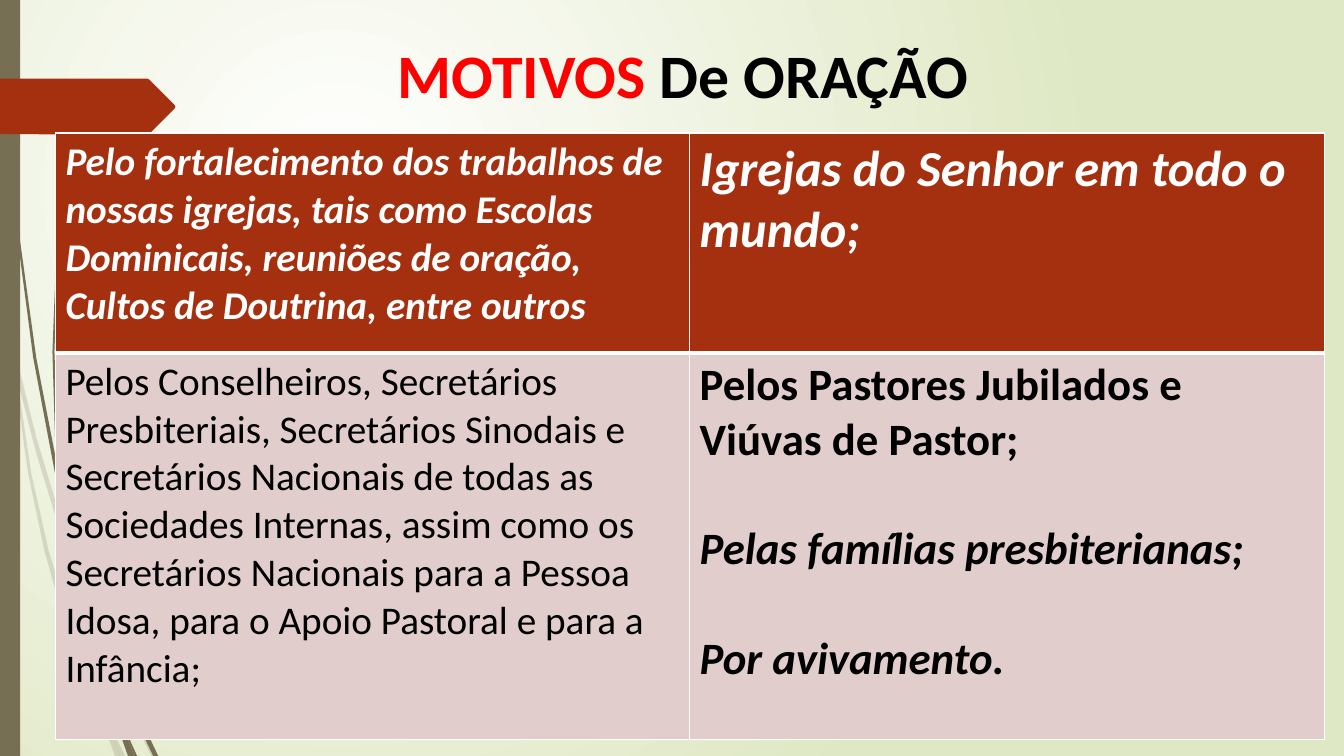
from pptx import Presentation
from pptx.dml.color import RGBColor
from pptx.enum.shapes import MSO_SHAPE
from pptx.enum.text import MSO_ANCHOR, PP_ALIGN
from pptx.oxml import parse_xml
from pptx.oxml.ns import nsdecls, qn
from pptx.util import Inches, Pt

THEME = {
    "font": "Calibri",
    "white": RGBColor(0xFF, 0xFF, 0xFF),
    "black": RGBColor(0, 0, 0),
    "red": RGBColor(0xFF, 0, 0),
    "rust": RGBColor(0xA5, 0x30, 0x10),
    "pink": RGBColor(0xE1, 0xCD, 0xCC),
    "olive": RGBColor(0x76, 0x6F, 0x54),
    "pale_green": RGBColor(0xDF, 0xE8, 0xC4),
    "title_size": Pt(44.1),
    "large": Pt(36),
    "medium": Pt(32),
    "small": Pt(28),
}


def draw_outline(points, color, opacity=100):
    corners = [(Inches(x), Inches(y)) for x, y in points]
    builder = slide.shapes.build_freeform(*corners[0])
    builder.add_line_segments(corners[1:], close=True)
    shape = builder.convert_to_shape()
    shape.shadow.inherit = False
    shape.fill.solid()
    shape.fill.fore_color.rgb = color
    shape.line.fill.background()
    if opacity < 100:
        color_element = shape._element.spPr.find(qn("a:solidFill"))[0]
        color_element.append(parse_xml(f'<a:alpha {nsdecls("a")} val="{opacity * 1000}"/>'))


def write_run(paragraph, text, format_values):
    run = paragraph.add_run()
    run.text = text
    run.font.name = THEME["font"]
    run.font.color.rgb = format_values["color"]
    for name in ("size", "bold", "italic"):
        setattr(run.font, name, format_values[name])


presentation = Presentation()
presentation.slide_width = Inches(13.33)
presentation.slide_height = Inches(7.5)
slide = presentation.slides.add_slide(presentation.slide_layouts[6])

# Background: circular glow from the upper left
background_fill = slide.background.fill
background_fill.gradient()
for stop, color in zip(background_fill.gradient_stops, ("white", "pale_green")):
    stop.color.rgb = THEME[color]
gradient = slide._element.find(".//" + qn("a:gradFill"))
gradient.replace(gradient.find(qn("a:lin")), parse_xml(
    f'<a:path {nsdecls("a")} path="circle">'
    '<a:fillToRect l="50000" t="50000" r="100000" b="100000"/></a:path>'))

# Grass stalks: faint ones behind, solid ones in front
faint_stalks = [
    [(0.58, 5.22), (0.84, 5.99), (0.85, 5.86), (0.62, 5.2), (0.36, 4.34), (0.14, 3.45),
     (0.17, 3.76), (0.36, 4.5)],
    [(0.92, 6.07), (0.88, 5.96), (0.88, 6.1), (1.23, 6.94), (1.5, 7.5), (1.55, 7.5), (1.27, 6.92)],
    [(1.19, 7.5), (1.24, 7.5), (1.05, 7.11)],
    [(0.93, 6.83), (0.7, 6.19), (0.48, 5.45), (0.31, 4.69), (0.17, 3.76), (0.11, 3.5),
     (0.28, 4.7), (0.44, 5.46), (0.65, 6.21), (0.92, 6.93), (1.01, 7.14), (0.99, 7.07)],
    [(1.01, 7.14), (1.14, 7.5), (1.19, 7.5)],
    [(0.96, 6.92), (0.93, 6.83), (0.99, 7.07), (1.01, 7.14), (1.19, 7.5), (1.05, 7.11)],
]
solid_stalks = [
    [(0.07, 1.1), (0.17, 2.33), (0.33, 3.55), (0.56, 4.77), (0.57, 4.81), (0.55, 4.57),
     (0.55, 4.53), (0.36, 3.55), (0.19, 2.32), (0.08, 1.09), (0.05, 0.48), (0.04, 0),
     (0.03, 0), (0.04, 0.48)],
    [(1.13, 6.49), (1.1, 6.41), (1.11, 6.56), (1.32, 7.08), (1.52, 7.5), (1.57, 7.5), (1.36, 7.06)],
    [(0.6, 4.72), (0.58, 4.53), (0.54, 3.49), (0.58, 2.45), (0.63, 1.93), (0.7, 1.41),
     (0.62, 1.93), (0.56, 2.45), (0.52, 3.49), (0.55, 4.49)],
    [(1.33, 7.5), (1.36, 7.5), (1.22, 7.19)],
    [(1.17, 7.22), (1.27, 7.5), (1.31, 7.5)],
    [(1.16, 7.06), (1.1, 6.91), (1.16, 7.17), (1.17, 7.22), (1.3, 7.5), (1.33, 7.5), (1.22, 7.19)],
]
for stalks, opacity in ((faint_stalks, 20), (solid_stalks, 100)):
    for stalk in stalks:
        draw_outline(stalk, THEME["olive"], opacity)

# Left bar and arrow tag
bar = slide.shapes.add_shape(MSO_SHAPE.RECTANGLE, 0, 0, Inches(0.2), Inches(7.5))
bar.shadow.inherit = False
bar.fill.solid()
bar.fill.fore_color.rgb = THEME["olive"]
bar.line.fill.background()
draw_outline([(0, 0.78), (1.46, 0.78), (1.48, 0.79), (1.73, 1.04), (1.74, 1.06),
              (1.73, 1.08), (1.48, 1.33), (1.46, 1.34), (0, 1.33)], THEME["rust"])

# Table of prayer reasons: each cell holds (text, format) paragraphs
heading = {"size": THEME["small"], "color": THEME["white"], "bold": True, "italic": True}
body = {"size": THEME["small"], "color": THEME["black"], "bold": False, "italic": False}
strong = {**body, "size": THEME["medium"], "bold": True}
strong_italic = {**strong, "italic": True}
reasons = [
    [[("Pelo fortalecimento dos trabalhos de nossas igrejas, tais como Escolas Dominicais, "
       "reuniões de oração, Cultos de Doutrina, entre outros", heading)],
     [("Igrejas do Senhor em todo o mundo;", {**heading, "size": THEME["large"]})]],
    [[("Pelos Conselheiros, Secretários Presbiteriais, Secretários Sinodais e Secretários "
       "Nacionais de todas as Sociedades Internas, assim como os Secretários Nacionais para a "
       "Pessoa Idosa, para o Apoio Pastoral e para a Infância;", body)],
     [("Pelos Pastores Jubilados e Viúvas de Pastor;", strong),
      ("Pelas famílias presbiterianas;", strong_italic),
      ("Por avivamento.", strong_italic)]],
]
table = slide.shapes.add_table(2, 2, Inches(0.55), Inches(1.32), Inches(12.59), Inches(6.02)).table
for column, width in zip(table.columns, (6.29, 6.3)):
    column.width = Inches(width)
for row, height in zip(table.rows, (2.18, 3.84)):
    row.height = Inches(height)

row_fills = (THEME["rust"], THEME["pink"])
for row_index, row_reasons in enumerate(reasons):
    for column_index, paragraphs in enumerate(row_reasons):
        cell = table.cell(row_index, column_index)
        for index, (text, format_values) in enumerate(paragraphs):
            paragraph = cell.text_frame.paragraphs[0] if index == 0 else cell.text_frame.add_paragraph()
            if index > 0:
                paragraph.space_before = Pt(39)
            write_run(paragraph, text, format_values)
        # Borders come before the fill in the cell properties
        properties = cell._tc.get_or_add_tcPr()
        divider = {0: "lnB", 1: "lnT"}[row_index]
        for side in ("lnL", "lnR", "lnT", "lnB"):
            width = Pt(3 if side == divider else 1)
            properties.append(parse_xml(
                f'<a:{side} {nsdecls("a")} w="{width}"><a:solidFill>'
                f'<a:srgbClr val="{THEME["white"]}"/></a:solidFill></a:{side}>'))
        cell.fill.solid()
        cell.fill.fore_color.rgb = row_fills[row_index]

# Title
title = slide.shapes.add_textbox(Inches(1.46), Inches(0.27), Inches(10.77), Inches(0.81))
frame_format = {"word_wrap": True, "vertical_anchor": MSO_ANCHOR.TOP,
                "margin_top": Inches(0.09), "margin_bottom": 0, "margin_right": Inches(0.24)}
for name, value in frame_format.items():
    setattr(title.text_frame, name, value)
paragraph = title.text_frame.paragraphs[0]
paragraph.alignment = PP_ALIGN.CENTER
for text, color in (("MOTIVOS ", "red"), ("De ORAÇÃO", "black")):
    write_run(paragraph, text, {**strong, "size": THEME["title_size"], "color": THEME[color]})

presentation.save("out.pptx")
